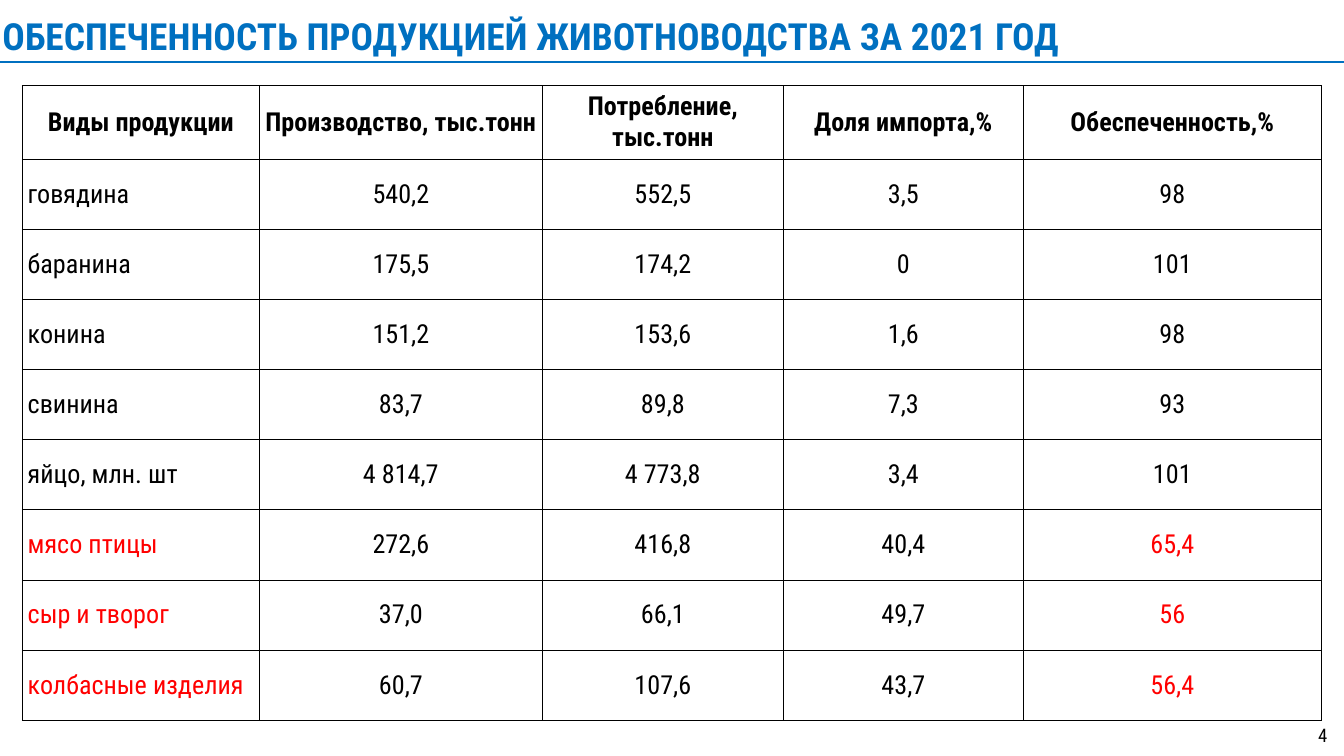
from lxml.etree import SubElement
from pptx import Presentation
from pptx.dml.color import RGBColor
from pptx.enum.shapes import MSO_CONNECTOR
from pptx.enum.text import MSO_ANCHOR as ANCHOR, PP_ALIGN as ALIGN
from pptx.oxml.ns import qn
from pptx.util import Pt

FONT = "Roboto Condensed"
COLORS = {"blue": "0070C0", "black": "000000", "red": "FF0000"}
INSET = 2.88
HEADER = ["Виды продукции", "Производство, тыс.тонн", "Потребление, тыс.тонн",
          "Доля импорта,%", "Обеспеченность,%"]
PRODUCTS = [
    ["говядина", "540,2", "552,5", "3,5", "98"],
    ["баранина", "175,5", "174,2", "0", "101"],
    ["конина", "151,2", "153,6", "1,6", "98"],
    ["свинина", "83,7", "89,8", "7,3", "93"],
    ["яйцо, млн. шт", "4 814,7", "4 773,8", "3,4", "101"],
    ["мясо птицы", "272,6", "416,8", "40,4", "65,4"],
    ["сыр и творог", "37,0", "66,1", "49,7", "56"],
    ["колбасные изделия", "60,7", "107,6", "43,7", "56,4"],
]
SHORTAGES = {"мясо птицы", "сыр и творог", "колбасные изделия"}
COLUMN_WIDTHS = [127, 151.6, 129.1, 128.6, 159.6]
HEADER_HEIGHT, ROW_HEIGHT = 38.5, 37.6


def write(frame, text, size, color, bold=False, align=ALIGN.LEFT):
    para = frame.paragraphs[0]
    para.alignment = align
    span = para.add_run()
    span.text = text
    span.font.name = FONT
    span.font.size = Pt(size)
    span.font.bold = bold
    span.font.color.rgb = RGBColor.from_string(COLORS[color])


def add_borders(cell):
    properties = cell._tc.get_or_add_tcPr()
    for side in ("a:lnL", "a:lnR", "a:lnT", "a:lnB"):
        line = SubElement(properties, qn(side), w=str(Pt(0.5)))
        fill = SubElement(line, qn("a:solidFill"))
        SubElement(fill, qn("a:srgbClr"), val=COLORS["black"])


deck = Presentation()
deck.slide_width, deck.slide_height = Pt(720), Pt(405)
page = deck.slides.add_slide(deck.slide_layouts[6])

title = page.shapes.add_textbox(Pt(-5.76), Pt(3.6), Pt(696), Pt(31))
title.text_frame.word_wrap = True
write(title.text_frame, "ОБЕСПЕЧЕННОСТЬ ПРОДУКЦИЕЙ ЖИВОТНОВОДСТВА ЗА 2021 ГОД",
      20, "blue", bold=True)

rows = [HEADER] + PRODUCTS
table = page.shapes.add_table(
    len(rows), len(HEADER), Pt(12), Pt(45.8), Pt(sum(COLUMN_WIDTHS)),
    Pt(HEADER_HEIGHT + ROW_HEIGHT * len(PRODUCTS))).table
table.horz_banding = False
for column, width in zip(table.columns, COLUMN_WIDTHS):
    column.width = Pt(width)

for row_index, values in enumerate(rows):
    is_header = row_index == 0
    table.rows[row_index].height = Pt(HEADER_HEIGHT if is_header else ROW_HEIGHT)
    for column_index, value in enumerate(values):
        cell = table.cell(row_index, column_index)
        cell.margin_left = cell.margin_right = Pt(INSET)
        cell.margin_top = cell.margin_bottom = Pt(INSET)
        cell.vertical_anchor = ANCHOR.MIDDLE
        add_borders(cell)
        cell.fill.background()
        is_name = column_index == 0
        is_supply = column_index == len(HEADER) - 1
        is_red = values[0] in SHORTAGES and (is_name or is_supply)
        write(cell.text_frame, value, 14, "red" if is_red else "black", is_header,
              ALIGN.LEFT if is_name and not is_header else ALIGN.CENTER)

rule = page.shapes.add_connector(MSO_CONNECTOR.STRAIGHT, Pt(0), Pt(33.1), Pt(720), Pt(33.1))
rule.line.color.rgb = RGBColor.from_string(COLORS["blue"])
rule.line.width = Pt(1)
SubElement(rule._element.spPr, qn("a:effectLst"))

number = page.shapes.add_textbox(Pt(699.1), Pt(384.5), Pt(19.4), Pt(19.4))
number.text_frame.word_wrap = False
write(number.text_frame, "4", 10, "black")

deck.save("out.pptx")
